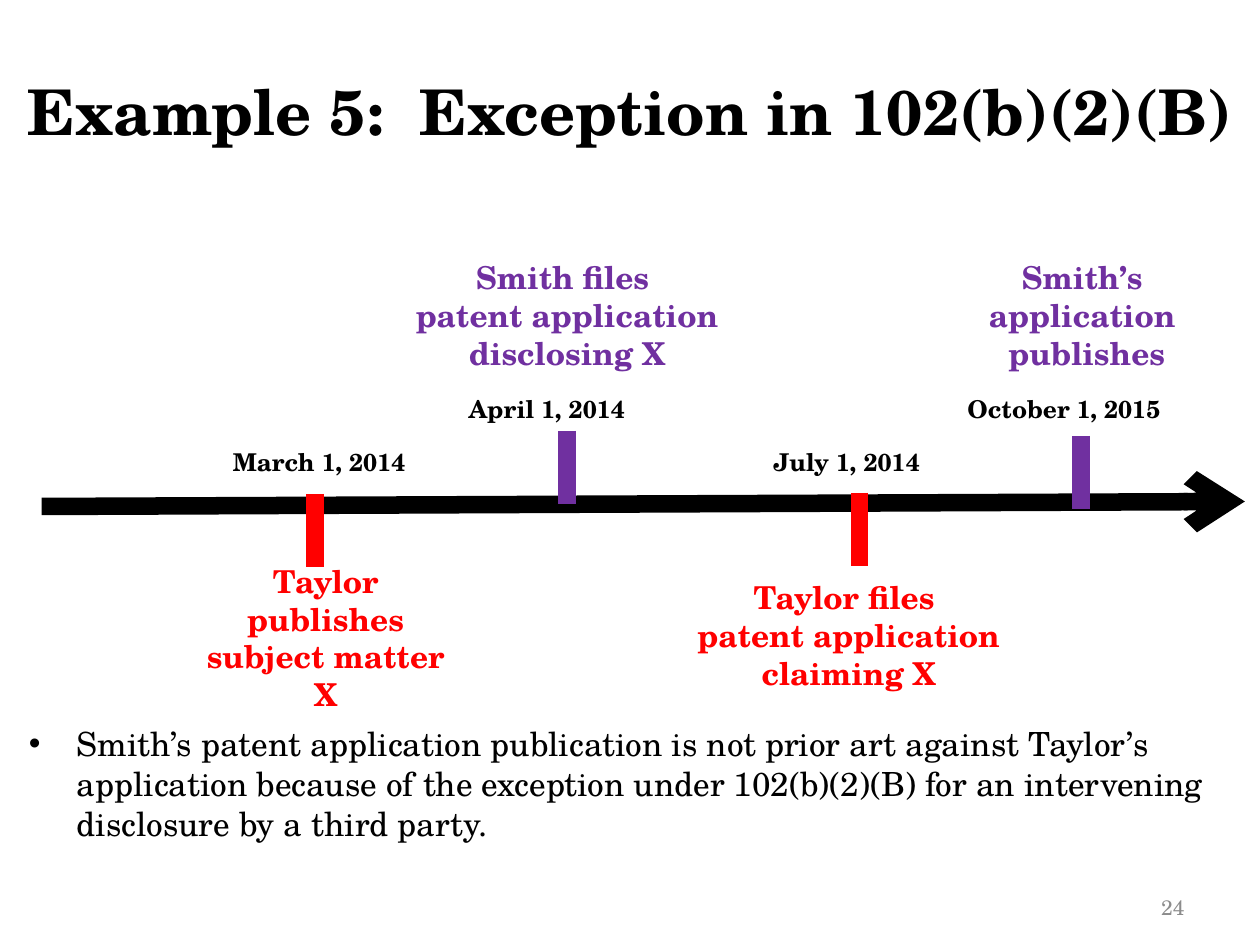
from dataclasses import dataclass

from lxml.etree import SubElement
from pptx import Presentation
from pptx.dml.color import RGBColor
from pptx.enum.shapes import MSO_CONNECTOR
from pptx.enum.text import MSO_ANCHOR, MSO_AUTO_SIZE, PP_ALIGN
from pptx.oxml.ns import qn
from pptx.util import Inches, Pt


@dataclass(frozen=True)
class Theme:
    font: str = "TeX Gyre Schola"
    black: str = "000000"
    gray: str = "8C8C8C"
    smith: str = "7030A0"
    taylor: str = "FF0000"
    title_size: int = 36
    body_size: int = 19
    event_size: int = 18
    date_size: int = 14
    number_size: int = 12
    line_width: int = 10


THEME = Theme()
MARKER_LENGTH = 0.58
EVENTS = [
    ("Taylor publishes subject matter X", (1.42, 4.41, 2.33, 0.71),
     "March 1, 2014", (1.75, 3.5, 1.75, 0.34), (2.5, 3.92), THEME.taylor),
    ("Smith files \vpatent application disclosing X", (3.04, 2, 2.92, 1.01),
     "April 1, 2014", (3.62, 3.08, 1.75, 0.34), (4.5, 3.42), THEME.smith),
    ("Taylor files \vpatent application claiming X", (5.11, 4.54, 3.25, 1.01),
     "July 1, 2014", (6.04, 3.5, 1.54, 0.34), (6.82, 3.91), THEME.taylor),
    ("Smith’s \vapplication \vpublishes", (7, 2, 3.25, 1.01),
     "October 1, 2015", (7.58, 3.08, 2, 0.34), (8.58, 3.46), THEME.smith),
]


def add_text(slide, text, box, size, color=THEME.black, bold=False,
             align=PP_ALIGN.LEFT, anchor=MSO_ANCHOR.TOP, grow=False):
    shape = slide.shapes.add_textbox(*map(Inches, box))
    frame = shape.text_frame
    frame.word_wrap = True
    frame.auto_size = MSO_AUTO_SIZE.SHAPE_TO_FIT_TEXT if grow else MSO_AUTO_SIZE.NONE
    frame.vertical_anchor = anchor
    paragraph = frame.paragraphs[0]
    paragraph.text = text
    paragraph.alignment = align
    for run in paragraph.runs:
        run.font.name = THEME.font
        run.font.size = Pt(size)
        run.font.bold = bold
        run.font.color.rgb = RGBColor.from_string(color)
    return paragraph


def add_bullet(paragraph, indent):
    properties = paragraph._p.get_or_add_pPr()
    properties.set("marL", str(Inches(indent)))
    properties.set("indent", str(-Inches(indent)))
    SubElement(properties, qn("a:buFont"), typeface="Arial")
    SubElement(properties, qn("a:buChar"), char="•")


def add_line(slide, start, end, color, arrow=False):
    connector = slide.shapes.add_connector(
        MSO_CONNECTOR.STRAIGHT, *map(Inches, (*start, *end)))
    connector.line.width = Pt(THEME.line_width)
    connector.line.color.rgb = RGBColor.from_string(color)
    if arrow:
        SubElement(connector.line._get_or_add_ln(), qn("a:tailEnd"), type="arrow")
    SubElement(connector._element.spPr, qn("a:effectLst"))


def add_event(slide, label, label_box, date, date_box, marker, color):
    add_text(slide, label, label_box, THEME.event_size, color, bold=True,
             align=PP_ALIGN.CENTER, grow=True)
    add_text(slide, date, date_box, THEME.date_size, bold=True, grow=True)
    left, top = marker
    add_line(slide, marker, (left, top + MARKER_LENGTH), color)


def main():
    presentation = Presentation()
    presentation.slide_width = Inches(10)
    presentation.slide_height = Inches(7.5)
    slide = presentation.slides.add_slide(presentation.slide_layouts[6])

    add_text(slide, "Example 5:  Exception in 102(b)(2)(B)", (0, 0.25, 10, 1.25),
             THEME.title_size, bold=True, align=PP_ALIGN.CENTER,
             anchor=MSO_ANCHOR.MIDDLE)
    add_text(slide, "24", (7.17, 6.83, 2.33, 0.52), THEME.number_size, THEME.gray,
             align=PP_ALIGN.RIGHT, anchor=MSO_ANCHOR.BOTTOM)
    conclusion = add_text(
        slide,
        "Smith’s patent application publication is not prior art against Taylor’s "
        "application because of the exception under 102(b)(2)(B) for an intervening "
        "disclosure by a third party.",
        (0.13, 5.69, 9.62, 1.81), THEME.body_size)
    add_bullet(conclusion, 0.38)

    add_line(slide, (0.33, 4.02), (9.88, 3.98), THEME.black, arrow=True)
    for event in EVENTS:
        add_event(slide, *event)

    presentation.save("out.pptx")


if __name__ == "__main__":
    main()
